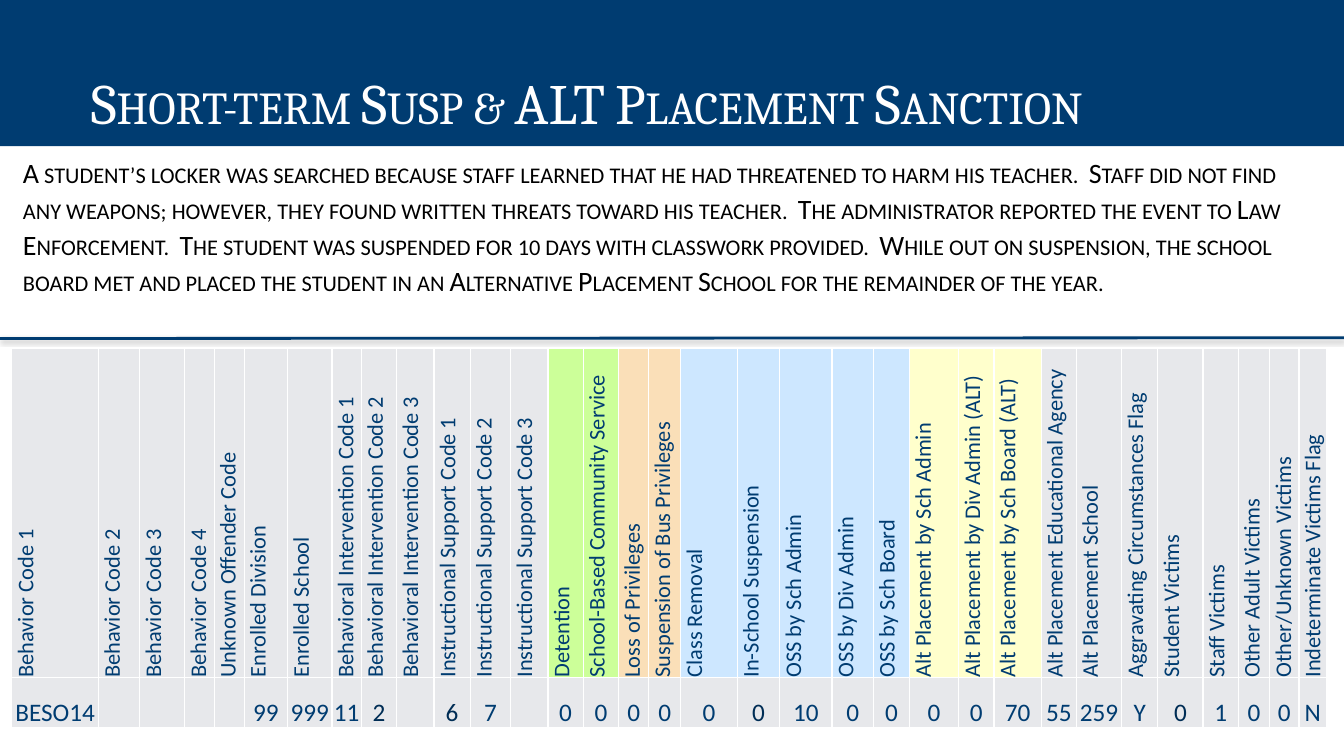
from dataclasses import dataclass

from lxml.etree import SubElement
from pptx import Presentation
from pptx.dml.color import RGBColor
from pptx.enum.shapes import MSO_CONNECTOR
from pptx.enum.text import MSO_ANCHOR as Anchor, MSO_AUTO_SIZE as AutoSize, PP_ALIGN as Align
from pptx.oxml.ns import qn
from pptx.util import Cm, Pt


@dataclass(frozen=True)
class Theme:
    navy: str = "003C71"
    deep_navy: str = "002D55"
    white: str = "FFFFFF"
    black: str = "000000"
    gray: str = "E7E8EB"
    green: str = "CCFF99"
    orange: str = "FADFB8"
    blue: str = "CDE7FF"
    yellow: str = "FFFFCC"
    heading_font: str = "Cambria"
    body_font: str = "Calibri"
    title_size: float = 40.7
    body_size: float = 20
    label_size: float = 16
    value_size: float = 18


THEME = Theme()
SLIDE_WIDTH, SLIDE_HEIGHT = Cm(33.87), Cm(19.05)
TITLE = "Short-term Susp & ALT Placement Sanction"
SCENARIO = (
    "A student’s locker was searched because staff learned that he had threatened to harm "
    "his teacher.  Staff did not find any weapons; however, they found written threats "
    "toward his teacher.  The administrator reported the event to Law Enforcement.  The "
    "student was suspended for 10 days with classwork provided.  While out on suspension, "
    "the school board met and placed the student in an Alternative Placement School for the "
    "remainder of the year."
)
COLUMNS = [
    ("Behavior Code 1", "BESO14", 2.18, THEME.gray),
    ("Behavior Code 2", "", 1.04, THEME.gray),
    ("Behavior Code 3", "", 1.14, THEME.gray),
    ("Behavior Code 4", "", 0.74, THEME.gray),
    ("Unknown Offender Code", "", 0.76, THEME.gray),
    ("Enrolled Division", "99", 1.09, THEME.gray),
    ("Enrolled School", "999", 1.12, THEME.gray),
    ("Behavioral Intervention Code 1", "11", 0.74, THEME.gray),
    ("Behavioral Intervention Code 2", "2", 0.89, THEME.gray),
    ("Behavioral Intervention Code 3", "", 0.94, THEME.gray),
    ("Instructional Support Code 1", "6", 0.91, THEME.gray),
    ("Instructional Support Code 2", "7", 1.02, THEME.gray),
    ("Instructional Support Code 3", "", 0.94, THEME.gray),
    ("Detention", "0", 0.89, THEME.green),
    ("School-Based Community Service", "0", 0.89, THEME.green),
    ("Loss of Privileges", "0", 0.76, THEME.orange),
    ("Suspension of Bus Privileges", "0", 0.81, THEME.orange),
    ("Class Removal", "0", 1.42, THEME.blue),
    ("In-School Suspension", "0", 1.07, THEME.blue),
    ("OSS by Sch Admin", "10", 1.32, THEME.blue),
    ("OSS by Div Admin", "0", 1.04, THEME.blue),
    ("OSS by Sch Board", "0", 0.91, THEME.blue),
    ("Alt Placement by Sch Admin", "0", 1.24, THEME.yellow),
    ("Alt Placement by Div Admin (ALT)", "0", 0.89, THEME.yellow),
    ("Alt Placement by Sch Board (ALT)", "70", 1.19, THEME.yellow),
    ("Alt Placement Educational Agency", "55", 0.89, THEME.gray),
    ("Alt Placement School", "259", 1.14, THEME.gray),
    ("Aggravating Circumstances Flag", "Y", 0.91, THEME.gray),
    ("Student Victims", "0", 1.14, THEME.gray),
    ("Staff Victims", "1", 0.89, THEME.gray),
    ("Other Adult Victims", "0", 0.79, THEME.gray),
    ("Other/Unknown Victims", "0", 0.74, THEME.gray),
    ("Indeterminate Victims Flag", "N", 0.69, THEME.gray),
]
DEEP_VALUES = {
    "Behavioral Intervention Code 2",
    "Instructional Support Code 1",
    "In-School Suspension",
    "Student Victims",
}


def color(value):
    return RGBColor.from_string(value)


def set_fill(target, value):
    target.fill.solid()
    target.fill.fore_color.rgb = color(value)


def set_margins(target, left, top, right, bottom):
    target.margin_left, target.margin_top = Cm(left), Cm(top)
    target.margin_right, target.margin_bottom = Cm(right), Cm(bottom)


def write(frame, text, font, size, ink, align):
    para = frame.paragraphs[0]
    para.text = text
    para.alignment = align
    para.font.name = font
    para.font.size = Pt(size)
    para.font.color.rgb = color(ink)
    return para


def write_small_caps(frame, text, font, size, ink):
    frame.word_wrap = True
    frame.auto_size = AutoSize.NONE
    para = write(frame, text, font, size, ink, Align.LEFT)
    para._p.pPr.find(qn("a:defRPr")).set("cap", "small")
    return para


def add_title(page):
    title = page.shapes.title
    title.left, title.top, title.width, title.height = 0, 0, SLIDE_WIDTH, Cm(3.68)
    set_fill(title, THEME.navy)
    frame = title.text_frame
    set_margins(frame, 2.29, 1.78, 0.25, 0.13)
    frame.vertical_anchor = Anchor.MIDDLE
    para = write_small_caps(frame, TITLE, THEME.heading_font, THEME.title_size, THEME.white)
    para.line_spacing = 0.9


def add_scenario(page):
    box = page.shapes.add_textbox(Cm(0.25), Cm(3.68), Cm(33.17), Cm(14.27))
    frame = box.text_frame
    set_margins(frame, 0.33, 0.18, 0.33, 0.18)
    para = write_small_caps(frame, SCENARIO, THEME.body_font, THEME.body_size, THEME.black)
    para.line_spacing = 1.07
    para.space_after = Pt(8)


def add_divider(page):
    line = page.shapes.add_connector(
        MSO_CONNECTOR.STRAIGHT, 0, Cm(8.53), SLIDE_WIDTH, Cm(8.51)
    )
    line.line.color.rgb = color(THEME.navy)
    line.line.width = Pt(2)
    effects = SubElement(line._element.spPr, qn("a:effectLst"))
    shadow = SubElement(
        effects, qn("a:outerShdw"), blurRad=str(Pt(3.1)), dist=str(Pt(1.6)), dir="5400000"
    )
    ink = SubElement(shadow, qn("a:srgbClr"), val=THEME.black)
    SubElement(ink, qn("a:alpha"), val="38000")


def add_borders(cell):
    properties = cell._tc.get_or_add_tcPr()
    for side in ("lnL", "lnR", "lnT", "lnB"):
        border = SubElement(properties, qn(f"a:{side}"), w=str(Pt(1)))
        fill = SubElement(border, qn("a:solidFill"))
        SubElement(fill, qn("a:srgbClr"), val=THEME.white)


def format_cell(cell, text, size, ink, align, fill):
    add_borders(cell)
    set_fill(cell, fill)
    set_margins(cell, 0, 0, 0, 0)
    cell.vertical_anchor = Anchor.BOTTOM
    write(cell.text_frame, text, THEME.body_font, size, ink, align)


def add_record_table(page):
    width = Cm(sum(column[2] for column in COLUMNS))
    frame = page.shapes.add_table(2, len(COLUMNS), Cm(0.3), Cm(8.79), width, Cm(9.55))
    table = frame.table
    table.first_row = table.horz_banding = False
    table.rows[0].height, table.rows[1].height = Cm(8.28), Cm(1.27)
    for index, (label, value, column_width, fill) in enumerate(COLUMNS):
        table.columns[index].width = Cm(column_width)
        header = table.cell(0, index)
        format_cell(header, label, THEME.label_size, THEME.navy, Align.JUSTIFY, fill)
        header._tc.tcPr.set("vert", "vert270")
        ink = THEME.deep_navy if label in DEEP_VALUES else THEME.navy
        format_cell(
            table.cell(1, index), value, THEME.value_size, ink, Align.CENTER, THEME.gray
        )


def main():
    deck = Presentation()
    deck.slide_width, deck.slide_height = SLIDE_WIDTH, SLIDE_HEIGHT
    page = deck.slides.add_slide(deck.slide_layouts.get_by_name("Title Only"))
    add_title(page)
    add_scenario(page)
    add_divider(page)
    add_record_table(page)
    deck.save("out.pptx")


if __name__ == "__main__":
    main()
